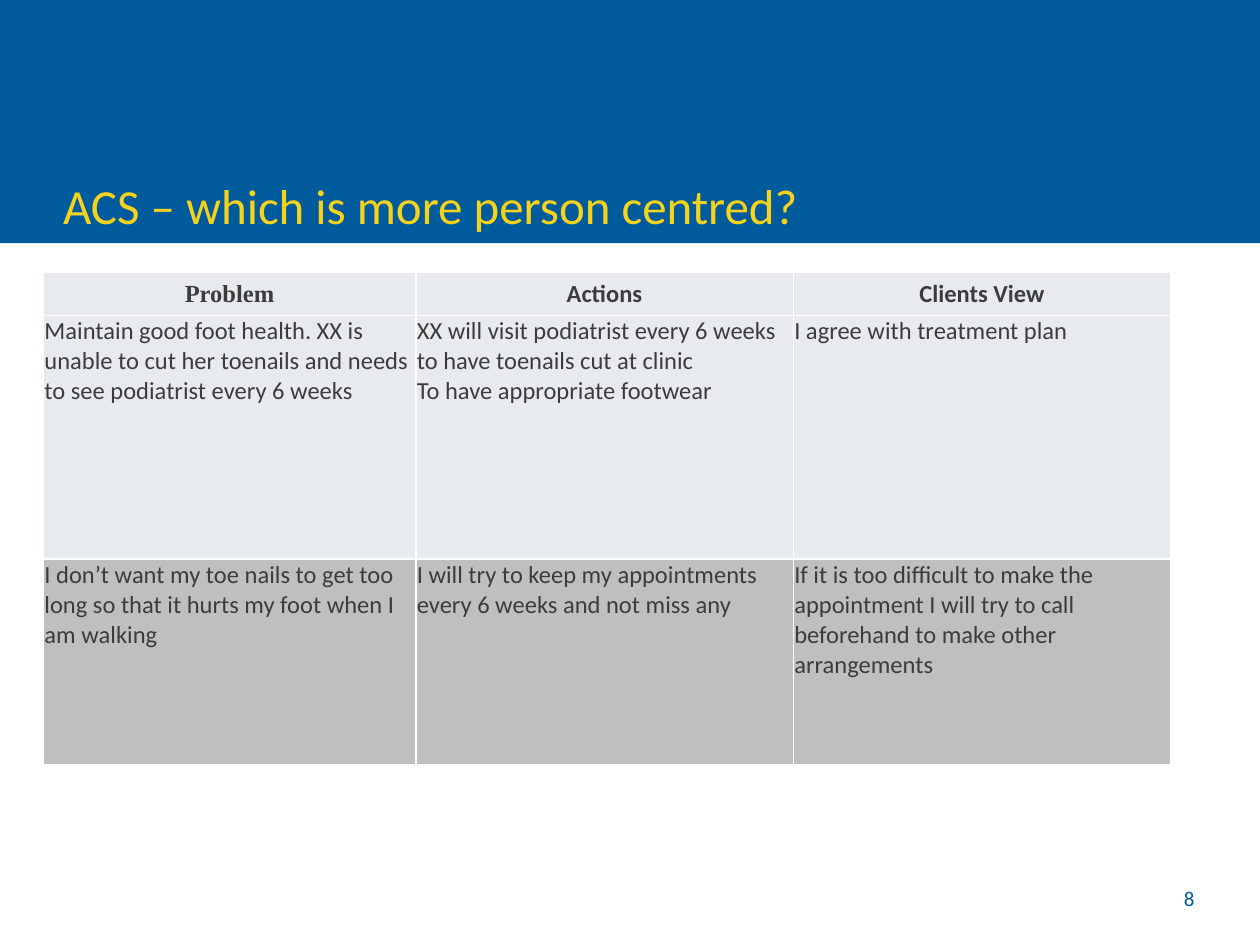
import dataclasses

import lxml.etree
import pptx
import pptx.dml.color
import pptx.enum.shapes
import pptx.enum.text
import pptx.oxml.ns
import pptx.util

Pt = pptx.util.Pt
ALIGN = pptx.enum.text.PP_ALIGN
ANCHOR = pptx.enum.text.MSO_ANCHOR

BLUE, YELLOW, WHITE, CHARCOAL = "005B9C", "F6D21C", "FFFFFF", "3C3C3B"
PALE, GREY = "E7EAEF", "BFBFBF"
COLUMN_WIDTHS = (212.8, 215.7, 215.7)


@dataclasses.dataclass(frozen=True)
class TableRow:
    """One row of the care plan table."""

    height: float
    fill: str
    texts: tuple[str, ...]
    header: bool = False


ROWS = (
    TableRow(24.4, PALE, ("Problem", "Actions", "Clients View"), header=True),
    TableRow(139.4, PALE, (
        "Maintain good foot health. XX is unable to cut her toenails and needs to see podiatrist every 6 weeks",
        "XX will visit podiatrist every 6 weeks to have toenails cut at clinic\nTo have appropriate footwear",
        "I agree with treatment plan",
    )),
    TableRow(117.4, GREY, (
        "I don’t want my toe nails to get too long so that it hurts my foot when I am walking",
        "I will try to keep my appointments every 6 weeks and not miss any",
        "If it is too difficult to make the appointment I will try to call beforehand to make other arrangements",
    )),
)


def rgb(value: str) -> pptx.dml.color.RGBColor:
    """Turn a hex string into a colour."""
    return pptx.dml.color.RGBColor.from_string(value)


def write_text(frame, text: str, *, size: float, color: str, font: str = "Calibri",
               bold: bool = False, align=ALIGN.LEFT) -> None:
    """Fill a text frame with formatted paragraphs, one per line."""
    frame.word_wrap = True
    frame.text = text
    for paragraph in frame.paragraphs:
        paragraph.alignment = align
        paragraph.font.size = Pt(size)
        paragraph.font.name = font
        paragraph.font.bold = bold
        paragraph.font.color.rgb = rgb(color)


def set_margins(target, margin: float) -> None:
    """Give a text frame or cell the same margin on every side."""
    target.margin_left = target.margin_right = Pt(margin)
    target.margin_top = target.margin_bottom = Pt(margin)


def set_borders(cell, color: str, width: float) -> None:
    """Draw a solid line on all four sides of a cell."""
    qualified = pptx.oxml.ns.qn
    properties = cell._tc.get_or_add_tcPr()
    for side in ("lnL", "lnR", "lnT", "lnB"):
        line = lxml.etree.SubElement(properties, qualified(f"a:{side}"), w=str(Pt(width)))
        fill = lxml.etree.SubElement(line, qualified("a:solidFill"))
        lxml.etree.SubElement(fill, qualified("a:srgbClr"), val=color)


def add_title(slide, text: str) -> None:
    """Place the title over a full-width blue banner."""
    title = slide.shapes.title
    title.left, title.top, title.width, title.height = Pt(36), Pt(95.8), Pt(633), Pt(42.5)
    frame = title.text_frame
    set_margins(frame, 0)
    frame.auto_size = pptx.enum.text.MSO_AUTO_SIZE.NONE
    frame.vertical_anchor = ANCHOR.MIDDLE
    write_text(frame, text, size=28, color=YELLOW)

    banner = slide.shapes.add_shape(
        pptx.enum.shapes.MSO_SHAPE.RECTANGLE, Pt(0), Pt(0), Pt(720), Pt(139))
    banner.shadow.inherit = False
    banner.fill.solid()
    banner.fill.fore_color.rgb = rgb(BLUE)
    banner.line.fill.background()
    title.element.addprevious(banner.element)


def add_plan_table(slide, rows: tuple[TableRow, ...]) -> None:
    """Add the care plan table with its header row."""
    table = slide.shapes.add_table(
        len(rows), len(COLUMN_WIDTHS), Pt(24.8), Pt(155.8),
        Pt(sum(COLUMN_WIDTHS)), Pt(sum(row.height for row in rows))).table
    for column, width in zip(table.columns, COLUMN_WIDTHS):
        column.width = Pt(width)
    for row_index, row in enumerate(rows):
        table.rows[row_index].height = Pt(row.height)
        for column_index, text in enumerate(row.texts):
            cell = table.cell(row_index, column_index)
            set_borders(cell, WHITE, 1)
            cell.fill.solid()
            cell.fill.fore_color.rgb = rgb(row.fill)
            set_margins(cell, 0.6)
            cell.vertical_anchor = ANCHOR.MIDDLE if row.header else ANCHOR.TOP
            write_text(cell.text_frame, text, size=14, color=CHARCOAL, bold=row.header,
                       font="Times New Roman" if text == "Problem" else "Calibri",
                       align=ALIGN.CENTER if row.header else ALIGN.LEFT)


def add_page_number(slide, number: int) -> None:
    """Add the page number at the lower right."""
    frame = slide.shapes.add_textbox(Pt(514.8), Pt(506.2), Pt(167.8), Pt(23.8)).text_frame
    set_margins(frame, 0)
    write_text(frame, str(number), size=12, color=BLUE, align=ALIGN.RIGHT)


def main() -> None:
    """Build and save the presentation."""
    presentation = pptx.Presentation()
    presentation.slide_width, presentation.slide_height = Pt(720), Pt(540)
    slide = presentation.slides.add_slide(presentation.slide_layouts.get_by_name("Title Only"))
    add_title(slide, "ACS – which is more person centred?")
    add_plan_table(slide, ROWS)
    add_page_number(slide, 8)
    presentation.save("out.pptx")


if __name__ == "__main__":
    main()
